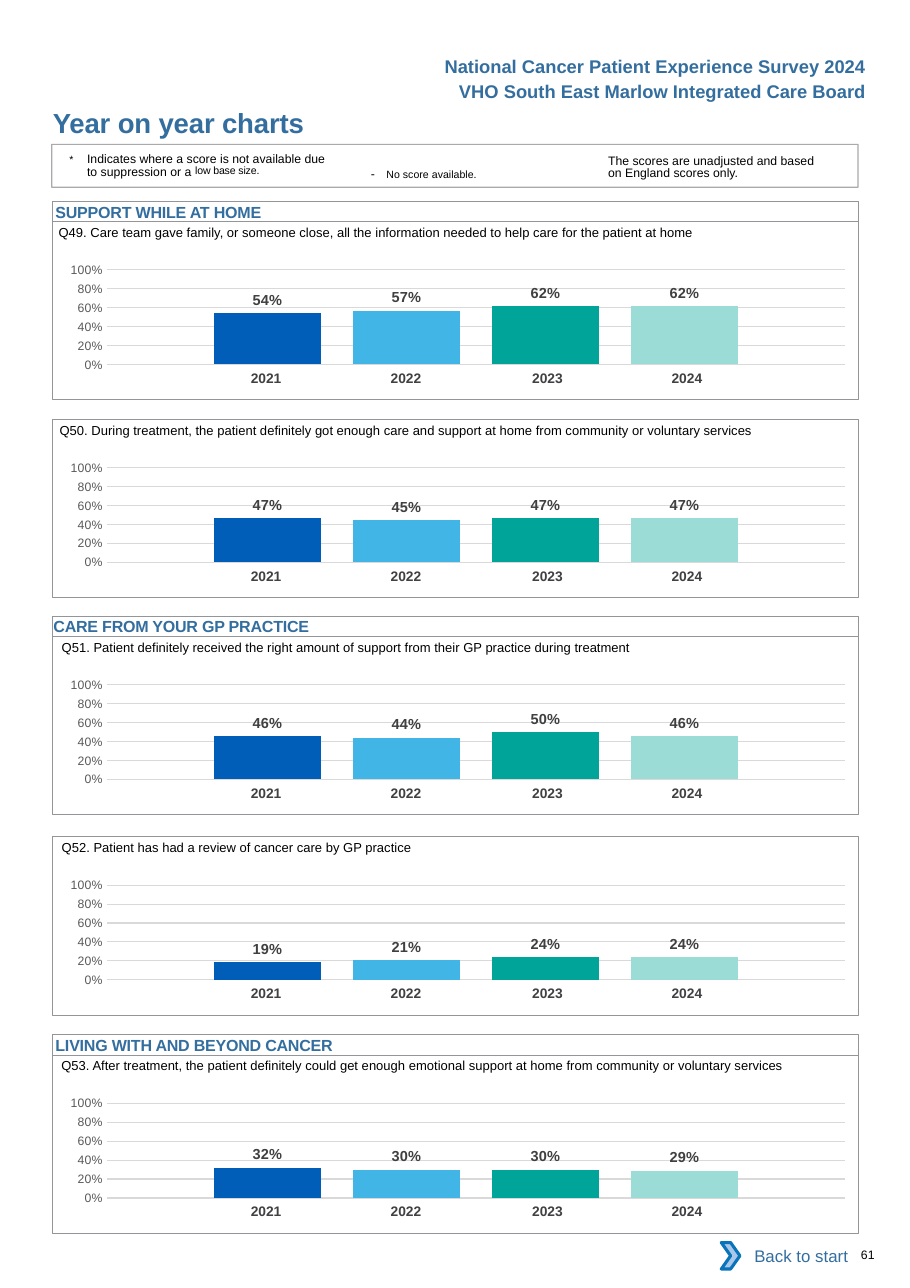
from lxml.etree import SubElement
from pptx import Presentation
from pptx.chart.data import CategoryChartData
from pptx.dml.color import RGBColor
from pptx.enum.chart import XL_CHART_TYPE, XL_LABEL_POSITION, XL_TICK_MARK
from pptx.enum.shapes import MSO_SHAPE
from pptx.enum.text import MSO_ANCHOR, PP_ALIGN
from pptx.oxml import parse_xml
from pptx.oxml.ns import nsdecls, qn
from pptx.util import Pt

COLOURS = {
    "heading": "336E9F", "text": "000000", "year": "414042", "label": "404040",
    "axis": "595959", "grid": "D9D9D9", "frame": "939598", "white": "FFFFFF",
    "arrow": "A8C7E9", "arrow line": "0A74BB",
}
YEAR_COLOURS = {"2021": "005EB8", "2022": "41B6E6", "2023": "00A499", "2024": "9CDCD7"}
YEAR_COLUMNS = [(91.4, 0), (91.4, 0), (96.5, 2.9), (91.4, 8.6)]  # width, right margin
NO_TABLE_STYLE = "{2D5ABB26-0587-4C30-8999-92F81FD0307C}"

FRAME_LEFT, FRAME_WIDTH, FRAME_HEIGHT = 34.2, 527, 116.6
HEADING_HEIGHT = 13.2

# frame top, section heading, heading inset, question left, question, yearly scores
QUESTIONS = [
    (144.7, "SUPPORT WHILE AT HOME", 2, 37.6,
     "Q49. Care team gave family, or someone close, all the information needed "
     "to help care for the patient at home", (0.54, 0.57, 0.62, 0.62)),
    (274, None, 0, 38.2,
     "Q50. During treatment, the patient definitely got enough care and support "
     "at home from community or voluntary services", (0.47, 0.45, 0.47, 0.47)),
    (415.8, "CARE FROM YOUR GP PRACTICE", 0.7, 39.6,
     "Q51. Patient definitely received the right amount of support from their "
     "GP practice during treatment", (0.46, 0.44, 0.5, 0.46)),
    (546.8, None, 0, 39.6,
     "Q52. Patient has had a review of cancer care by GP practice",
     (0.19, 0.21, 0.24, 0.24)),
    (689.4, "LIVING WITH AND BEYOND CANCER", 2, 39.4,
     "Q53. After treatment, the patient definitely could get enough emotional "
     "support at home from community or voluntary services", (0.32, 0.3, 0.3, 0.29)),
]


def colour(name):
    return RGBColor.from_string(COLOURS.get(name, name))


def format_font(font, size, color, bold=False):
    font.name, font.size, font.bold = "Arial", Pt(size), bold
    font.color.rgb = colour(color)


def write_text(frame, *runs, size=8, color="text", bold=False, align=PP_ALIGN.LEFT,
               anchor=MSO_ANCHOR.TOP, margins=(0, 0, 0, 0), wrap=True,
               line_spacing=None, hanging=0, spacing=0):
    """Fill a text frame; a run is a string or (string, size, baseline %, spacing)."""
    frame.word_wrap, frame.vertical_anchor = wrap, anchor
    (frame.margin_left, frame.margin_top,
     frame.margin_right, frame.margin_bottom) = map(Pt, margins)
    paragraph = frame.paragraphs[0]
    paragraph.alignment = align
    if line_spacing:
        paragraph.line_spacing = Pt(line_spacing)
    if hanging:
        properties = paragraph._p.get_or_add_pPr()
        properties.set("marL", str(Pt(hanging)))
        properties.set("indent", str(-Pt(hanging)))
    for item in runs:
        text, run_size, baseline, run_spacing = (
            (item, size, 0, spacing) if isinstance(item, str) else item)
        run = paragraph.add_run()
        run.text = text
        format_font(run.font, run_size, color, bold)
        run_properties = run._r.get_or_add_rPr()
        if baseline:
            run_properties.set("baseline", str(baseline * 1000))
        if run_spacing:
            run_properties.set("spc", str(round(run_spacing * 100)))


class SurveyPage:
    """Holds the current slide and draws its elements; lengths are points."""

    def __init__(self, slide):
        self.slide = slide
        self.shapes = slide.shapes

    def title(self, text, box):
        title = self.shapes.title
        title.left, title.top, title.width, title.height = map(Pt, box)
        write_text(title.text_frame, text, size=18, color="heading", bold=True,
                   spacing=-0.1, margins=(0.7, 0, 0, 0))

    def text(self, box, *runs, **text_format):
        shape = self.shapes.add_textbox(*map(Pt, box))
        write_text(shape.text_frame, *runs, **text_format)

    def shape(self, box, kind=MSO_SHAPE.RECTANGLE, fill=None, line=None, width=0.5):
        shape = self.shapes.add_shape(kind, *map(Pt, box))
        shape.shadow.inherit = False
        if fill:
            shape.fill.solid()
            shape.fill.fore_color.rgb = colour(fill)
        else:
            shape.fill.background()
        if line:
            shape.line.color.rgb = colour(line)
            shape.line.width = Pt(width)
        else:
            shape.line.fill.background()
        return shape

    def chart(self, box, scores):
        data = CategoryChartData(number_format="0%")
        data.categories = ["1"]
        for number, score in enumerate(scores, 1):
            data.add_series(f"Series {number}", [score])
        chart = self.shapes.add_chart(
            XL_CHART_TYPE.COLUMN_CLUSTERED, *map(Pt, box), data).chart
        chart.has_legend = chart.has_title = False
        chart.font.name, chart.font.size = "Calibri", Pt(10)
        chart.font.color.rgb = colour("text")
        chart.category_axis.visible = False
        axis = chart.value_axis
        axis.minimum_scale, axis.maximum_scale, axis.major_unit = 0, 1, 0.2
        axis.major_tick_mark = axis.minor_tick_mark = XL_TICK_MARK.NONE
        axis.format.line.fill.background()
        axis.major_gridlines.format.line.color.rgb = colour("grid")
        axis.major_gridlines.format.line.width = Pt(0.75)
        axis.tick_labels.number_format = "0%"
        axis.tick_labels.number_format_is_linked = False
        format_font(axis.tick_labels.font, 8, "axis")
        plot = chart.plots[0]
        plot.vary_by_categories = False
        plot.gap_width, plot.overlap = 200, -30
        for series, fill in zip(plot.series, YEAR_COLOURS.values()):
            series.format.fill.solid()
            series.format.fill.fore_color.rgb = colour(fill)
            labels = series.data_labels
            labels.show_value = True
            labels.position = XL_LABEL_POSITION.OUTSIDE_END
            labels.number_format, labels.number_format_is_linked = "0%", False
            format_font(labels.font, 9.5, "label", True)
        self.place_plot(chart, x=0.079, y=0.145, w=0.915, h=0.666)

    def place_plot(self, chart, **place):
        """Fix the inner plot area as fractions of the chart."""
        entries = [("layoutTarget", "inner"), ("xMode", "edge"), ("yMode", "edge")]
        entries += place.items()
        children = "".join(f'<c:{tag} val="{value}"/>' for tag, value in entries)
        plot_area = chart._chartSpace.chart.plotArea
        for layout in plot_area.findall(qn("c:layout")):
            plot_area.remove(layout)
        plot_area.insert(0, parse_xml(
            f'<c:layout {nsdecls("c")}><c:manualLayout>{children}'
            "</c:manualLayout></c:layout>"))

    def year_table(self, left, top):
        width = sum(column_width for column_width, _ in YEAR_COLUMNS)
        table = self.shapes.add_table(
            1, len(YEAR_COLUMNS), Pt(left), Pt(top), Pt(width), Pt(19.4)).table
        table.first_row = table.horz_banding = False
        table._tbl.tblPr.find(qn("a:tableStyleId")).text = NO_TABLE_STYLE
        for index, (year, (column_width, right)) in enumerate(
                zip(YEAR_COLOURS, YEAR_COLUMNS)):
            table.columns[index].width = Pt(column_width)
            cell = table.cell(0, index)
            cell.fill.background()
            write_text(cell.text_frame, year, size=9, color="year", bold=True,
                       align=PP_ALIGN.CENTER)
            cell.margin_left, cell.margin_right = Pt(7.2), Pt(right)
            cell.margin_top = cell.margin_bottom = Pt(3.6)

    def question(self, top, heading, inset, left, question, scores):
        self.chart((28.4, top + 18.2, FRAME_WIDTH, 92.9), scores)
        self.year_table(124.6, top + 94)
        self.shape((FRAME_LEFT, top, FRAME_WIDTH, FRAME_HEIGHT), line="frame")
        if heading:
            bar = self.shape((FRAME_LEFT, top - HEADING_HEIGHT, FRAME_WIDTH,
                              HEADING_HEIGHT), line="frame")
            write_text(bar.text_frame, heading, size=10.5, color="heading", bold=True,
                       spacing=-0.12, margins=(inset, 0.5, 0, 0))
        self.text((left, top - 4.5, 519, 17.3), question, size=8.5,
                  margins=(0.7, 6.5, 0, 0))

    def score_notes(self):
        box = self.shape((33.8, 94.3, FRAME_WIDTH, 28.1), line="frame", width=0.75)
        line_colour = box.line.fill._xPr.find(qn("a:solidFill"))[0]
        SubElement(line_colour, qn("a:alpha")).set("val", "80000")
        self.text((45.4, 99.2, 172, 20), ("*\t", 12, 3, 0),
                  "Indicates where a score is not available due to suppression or a ",
                  ("low base size.", 12, 7, -0.1),
                  margins=(0, 2.2, 0, 0), line_spacing=8.1, hanging=11.5)
        self.text((235.4, 101.2, 131.8, 17.3), ("- ", 8, 0, 2.6),
                  ("No score available.", 12, 3, 0), margins=(7.2, 3.6, 7.2, 3.6))
        self.text((397.4, 99.2, 142.5, 19.4),
                  "The scores are unadjusted and based on England scores only.",
                  margins=(0, 2.2, 0, 0), line_spacing=8.1)

    def back_button(self):
        button = self.shape((476.4, 805.4, 85, 30.2), fill="white")
        write_text(button.text_frame, "Back to start", size=11, color="heading",
                   align=PP_ALIGN.RIGHT, anchor=MSO_ANCHOR.MIDDLE,
                   margins=(7.2, 3.6, 7.2, 3.6))
        self.shape((471.4, 812, 12.2, 17.3), MSO_SHAPE.CHEVRON,
                   fill="arrow", line="arrow line", width=2)


def main():
    presentation = Presentation()
    presentation.slide_width, presentation.slide_height = Pt(594.72), Pt(841.68)
    page = SurveyPage(presentation.slides.add_slide(presentation.slide_layouts[5]))
    for top, line in ((32.8, "National Cancer Patient Experience Survey 2024"),
                      (49, "VHO South East Marlow Integrated Care Board")):
        page.text((282, top, 291.1, 21.6), line, size=12, color="heading", bold=True,
                  align=PP_ALIGN.RIGHT, wrap=False, margins=(7.2, 3.6, 7.2, 3.6))
    page.title("Year on year charts", (33.8, 69.1, 324, 21.6))
    page.score_notes()
    page.back_button()
    for question in QUESTIONS:
        page.question(*question)
    page.text((555.6, 815.4, 36.7, 9.4), "61", margins=(7.2, 0, 0, 0))
    presentation.save("out.pptx")


if __name__ == "__main__":
    main()
